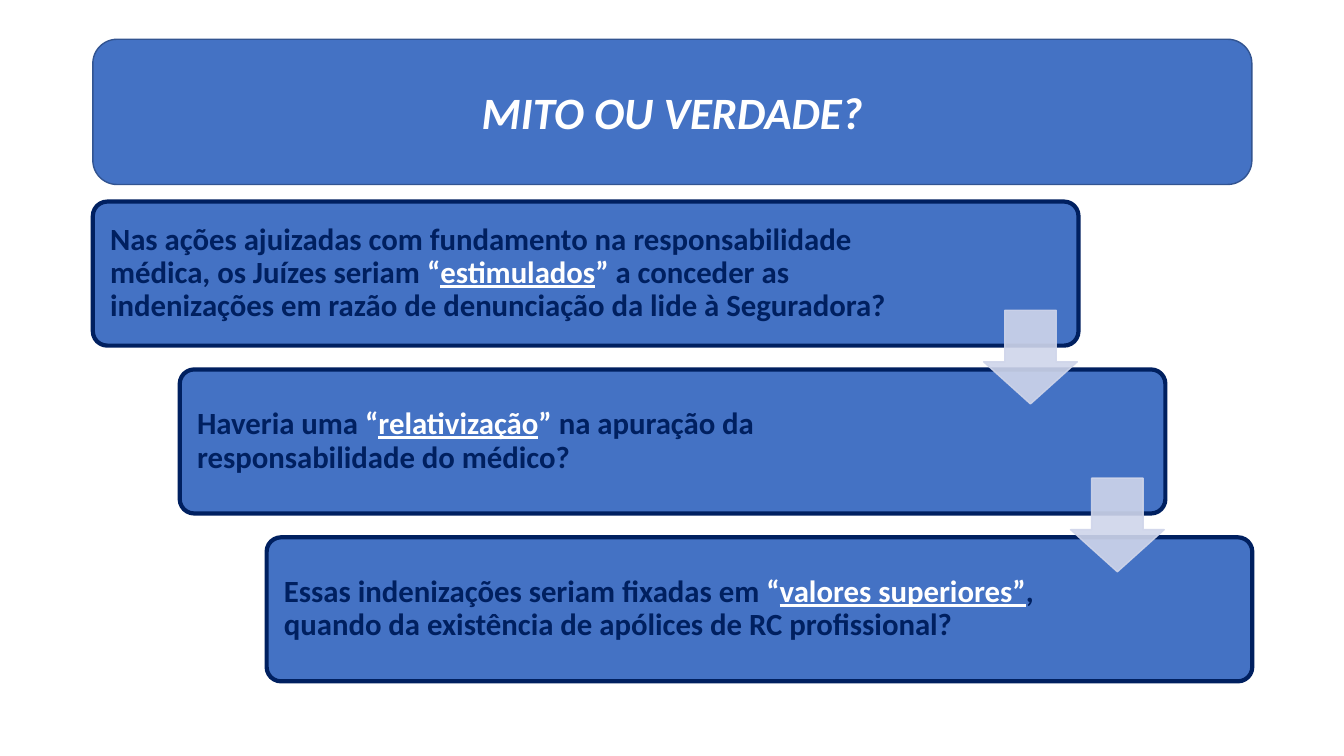
from lxml import etree
from pptx import Presentation
from pptx.dml.color import RGBColor
from pptx.enum.shapes import MSO_SHAPE
from pptx.enum.text import MSO_ANCHOR, PP_ALIGN
from pptx.oxml.ns import qn
from pptx.util import Cm, Pt

ROUNDED = MSO_SHAPE.ROUNDED_RECTANGLE
DOWN_ARROW = MSO_SHAPE.DOWN_ARROW
MIDDLE = MSO_ANCHOR.MIDDLE
LEFT, CENTER = PP_ALIGN.LEFT, PP_ALIGN.CENTER

BLUE = RGBColor(0x44, 0x72, 0xC4)
DARK_BLUE = RGBColor(0x32, 0x54, 0x91)
NAVY = RGBColor(0x00, 0x20, 0x60)
PALE_BLUE = RGBColor(0xCF, 0xD5, 0xEA)
WHITE = RGBColor(0xFF, 0xFF, 0xFF)

STEP_X, STEP_Y = 2.19, 4.23
QUESTIONS = [
    (4.06, "Nas ações ajuizadas com fundamento na responsabilidade médica, os Juízes seriam ",
     "estimulados", "” ",
     "a conceder as indenizações em razão de denunciação da lide à Seguradora?"),
    (4.9, "Haveria uma ", "relativização", "” ",
     "na apuração da responsabilidade do médico?"),
    (4.9, "Essas indenizações seriam fixadas em ", "valores superiores”", "",
     ", quando da existência de apólices de RC profissional?"),
]

prs = Presentation()
prs.slide_width, prs.slide_height = Cm(33.87), Cm(19.05)
slide = prs.slides.add_slide(prs.slide_layouts[6])


def add_block(kind, left, top, width, height, fill, line, line_width):
    block = slide.shapes.add_shape(kind, Cm(left), Cm(top), Cm(width), Cm(height))
    block.shadow.inherit = False
    block.fill.solid()
    block.fill.fore_color.rgb = fill
    block.line.color.rgb = line
    block.line.width = Pt(line_width)
    block.text_frame.word_wrap = True
    block.text_frame.vertical_anchor = MIDDLE
    return block


def style_paragraph(paragraph, size, alignment):
    paragraph.alignment = alignment
    paragraph.font.name = "Calibri"
    paragraph.font.size = Pt(size)
    paragraph.font.bold = True


for i, (right_margin, before, stressed, closing, after) in enumerate(QUESTIONS):
    question = add_block(ROUNDED, 2.34 + i * STEP_X, 5.08 + i * STEP_Y, 24.84, 3.63,
                         BLUE, NAVY, 3)
    question.adjustments[0] = 0.1
    question.text_frame.margin_left = Cm(0.33)
    question.text_frame.margin_right = Cm(right_margin)
    sentence = question.text_frame.paragraphs[0]
    style_paragraph(sentence, 22, LEFT)
    sentence.line_spacing = 0.9
    for words, color, underlined in [(before, NAVY, False), ("“", WHITE, False),
                                     (stressed, WHITE, True), (closing, WHITE, False),
                                     (after, NAVY, False)]:
        if words:
            run = sentence.add_run()
            run.text = words
            run.font.color.rgb = color
            run.font.underline = underlined

for i in range(len(QUESTIONS) - 1):
    arrow = add_block(DOWN_ARROW, 24.79 + i * STEP_X, 7.82 + i * STEP_Y, 2.36, 2.36,
                      PALE_BLUE, PALE_BLUE, 1)
    arrow.adjustments[0] = 0.55
    arrow.adjustments[1] = 0.45
    for color in arrow._element.spPr.iter(qn("a:srgbClr")):
        etree.SubElement(color, qn("a:alpha"), val="90000")

banner = add_block(ROUNDED, 2.34, 0.99, 29.21, 3.66, BLUE, DARK_BLUE, 1)
title = banner.text_frame.paragraphs[0]
title.text = "MITO OU VERDADE?"
style_paragraph(title, 32, CENTER)
title.font.italic = True
title.font.color.rgb = WHITE

prs.save("out.pptx")
